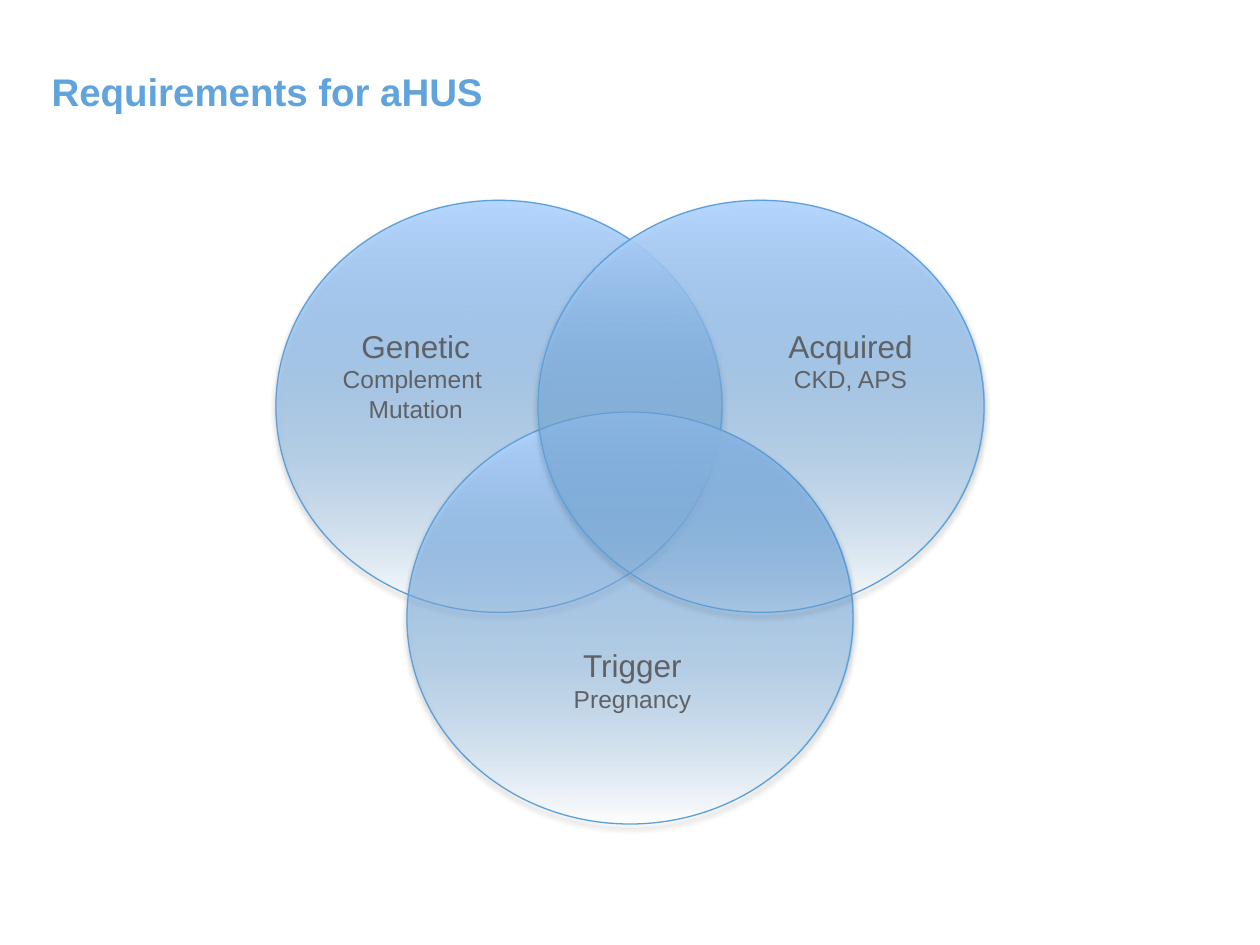
import pptx
import pptx.util
import pptx.oxml
import pptx.oxml.ns
import pptx.dml.color
import pptx.enum.shapes
import pptx.enum.text
from dataclasses import dataclass
from lxml import etree

Pt = pptx.util.Pt
Align = pptx.enum.text.PP_ALIGN
Anchor = pptx.enum.text.MSO_ANCHOR
SHADOW = (
    '<a:outerShdw xmlns:a="http://schemas.openxmlformats.org/drawingml/2006/main" '
    'blurRad="{blur}" dist="{dist}" dir="5400000" rotWithShape="0">'
    '<a:srgbClr val="000000"><a:alpha val="35000"/></a:srgbClr></a:outerShdw>'
)


@dataclass(frozen=True)
class Theme:
    font: str = "Arial"
    title: str = "61A3DC"
    text: str = "606164"
    edge: str = "5CA0DA"
    deep: str = "4FA4EE"
    pale: str = "B5D6FF"
    large: int = 22
    head: int = 18
    body: int = 14


class Deck:
    def __init__(self, theme):
        self.theme = theme
        self.prs = pptx.Presentation()
        self.prs.slide_width = pptx.util.Inches(10)
        self.prs.slide_height = pptx.util.Inches(7.5)
        self.slide = self.prs.slides.add_slide(self.prs.slide_layouts[6])

    def color(self, code):
        return pptx.dml.color.RGBColor.from_string(code)

    def place(self, left, top, width, height):
        wide, high = self.prs.slide_width, self.prs.slide_height
        return [round(share * size) for share, size in
                zip((left, top, width, height), (wide, high, wide, high))]

    def words(self, para, text, size, code, bold=False):
        run = para.add_run()
        run.text = text
        run.font.name = self.theme.font
        run.font.size = Pt(size)
        run.font.bold = bold
        run.font.color.rgb = self.color(code)

    def frame(self, area):
        frame = self.slide.shapes.add_textbox(*self.place(*area)).text_frame
        frame.word_wrap = True
        return frame

    def title(self, text, area):
        frame = self.frame(area)
        frame.vertical_anchor = Anchor.BOTTOM
        frame.margin_left = frame.margin_right = 0
        frame.margin_top = frame.margin_bottom = 0
        self.words(frame.paragraphs[0], text, self.theme.large, self.theme.title, True)

    def circle(self, mid, top, width, height):
        oval = self.slide.shapes.add_shape(
            pptx.enum.shapes.MSO_SHAPE.OVAL,
            *self.place(mid - width / 2, top, width, height))
        oval.fill.gradient()
        oval.fill.gradient_angle = 90
        stops = oval.fill.gradient_stops
        for stop, code, spot in zip(stops, (self.theme.deep, self.theme.pale), (0, 1)):
            stop.color.rgb = self.color(code)
            stop.position = spot
        clear = oval.element.spPr.xpath(".//a:gs/a:srgbClr")[0]
        etree.SubElement(clear, pptx.oxml.ns.qn("a:alpha")).set("val", "0")
        oval.line.color.rgb = self.color(self.theme.edge)
        oval.line.width = Pt(0.75)
        oval.shadow.inherit = False
        shade = SHADOW.format(blur=Pt(3.1), dist=Pt(1.8))
        oval.element.spPr.xpath("a:effectLst")[0].append(pptx.oxml.parse_xml(shade))

    def label(self, area, head, *lines):
        frame = self.frame(area)
        frame.auto_size = pptx.enum.text.MSO_AUTO_SIZE.SHAPE_TO_FIT_TEXT
        for row, text in enumerate((head, *lines)):
            para = frame.add_paragraph() if row else frame.paragraphs[0]
            para.alignment = Align.CENTER
            size = self.theme.body if row else self.theme.head
            self.words(para, text, size, self.theme.text)


def main():
    deck = Deck(Theme())
    deck.title("Requirements for aHUS", (0.041, 0.03, 0.827, 0.091))
    step, high, low = 0.104, 0.212, 0.436
    for shift, top in ((-step, high), (0, low), (step, high)):
        deck.circle(0.5 + shift, top, 0.354, 0.436)
    deck.label((0.218, 0.339, 0.224, 0.117), "Genetic", "Complement ", "Mutation")
    deck.label((0.43, 0.677, 0.144, 0.085), "Trigger", "Pregnancy")
    deck.label((0.589, 0.339, 0.172, 0.085), "Acquired", "CKD, APS")
    deck.prs.save("out.pptx")


if __name__ == "__main__":
    main()
